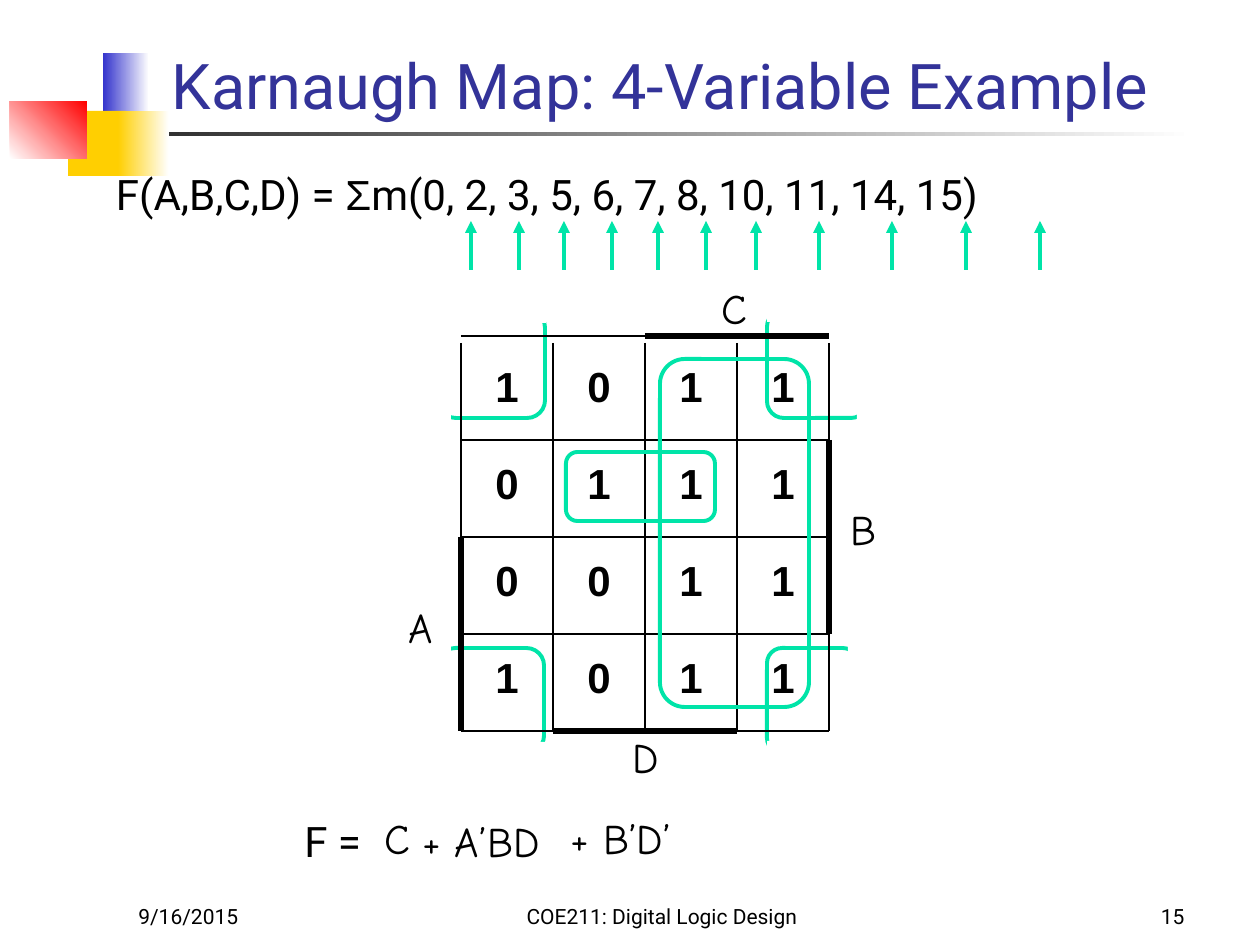
from lxml import etree
from pptx import Presentation
from pptx.dml.color import RGBColor
from pptx.enum.shapes import MSO_CONNECTOR, MSO_SHAPE
from pptx.enum.text import MSO_ANCHOR, MSO_AUTO_SIZE, PP_ALIGN
from pptx.oxml.ns import qn
from pptx.util import Pt

LEFT, CENTER, RIGHT = PP_ALIGN.LEFT, PP_ALIGN.CENTER, PP_ALIGN.RIGHT
TOP, MIDDLE, BOTTOM = MSO_ANCHOR.TOP, MSO_ANCHOR.MIDDLE, MSO_ANCHOR.BOTTOM
RECT, ROUNDED = MSO_SHAPE.RECTANGLE, MSO_SHAPE.ROUNDED_RECTANGLE

THEME = {
    "ink": "000000", "title": "333399", "loop": "00E4A8", "paper": "FFFFFF",
    "gray": "1C1C1C", "blue": "3333CC", "yellow": "FFCF01", "red": "FF0000",
    "sans": "Roboto", "digit": "Arial", "hand": "Comic Neue",
    "title_size": 36, "text_size": 24, "footer_size": 12,
    "thin": 1, "thick": 3, "loop_line": 2.25,
}

# Content; lengths in px, 126 to the inch
TITLE = "Karnaugh Map: 4-Variable Example"
FUNCTION = [("F(A,B,C,D) = ", "sans"), ("Σ", "digit"),
            ("m(0, 2, 3, 5, 6, 7, 8, 10, 11, 14, 15)", "sans")]
FOOTERS = [("9/16/2015", (126, 872, 262, 63), LEFT),
           ("COE211: Digital Logic Design", (462, 872, 400, 63), CENTER),
           ("15", (935, 872, 262, 63), RIGHT)]
DECORATION = [  # box, first colour, last colour, angle
    ((60, 132, 1134, 4), "gray", "paper", 0),
    ((103, 53, 46, 65), "blue", "paper", 0),
    ((68, 111, 58, 65), "yellow", "yellow", 0),
    ((118, 111, 51, 65), "yellow", "paper", 0),
    ((10, 101, 77, 58), "paper", "red", 45),
]
MAP_VALUES = ["1011", "0111", "0011", "1011"]
MAP_LEFT, MAP_TOP, CELL_W, CELL_H, TOP_GAP = 461, 343, 92, 97, 7
MAP_EDGES = [  # column, row to column, row, weight
    (0, 0, 2, 0, "thin"), (2, 0, 4, 0, "thick"),
    (0, 4, 1, 4, "thin"), (1, 4, 3, 4, "thick"), (3, 4, 4, 4, "thin"),
    (0, 0, 0, 2, "thin"), (0, 2, 0, 4, "thick"),
    (4, 0, 4, 1, "thin"), (4, 1, 4, 3, "thick"), (4, 3, 4, 4, "thin"),
]
CORNER_LOOPS = [  # loop, then the covers that open its outer sides
    ((438, 310, 107, 108), (410, 295, 41, 131), (406, 284, 140, 39)),
    ((767, 310, 101, 108), (857, 295, 39, 131), (767, 283, 131, 39)),
    ((438, 648, 106, 105), (410, 640, 41, 127), (407, 742, 139, 38)),
    ((767, 648, 91, 105), (848, 640, 35, 127), (767, 741, 118, 38)),
]
INNER_LOOPS = [(566, 452, 149, 69), (660, 359, 149, 348)]
VARIABLES = [("A", (406, 620, 35, 35)), ("B", (848, 522, 32, 35)),
             ("D", (630, 750, 35, 35))]
TERMS = [("C", (709, 276, 50, 63)), ("C", (372, 806, 50, 63)),
         ("+ A’BD", (410, 809, 152, 63)), ("+ B’D’", (558, 806, 130, 63))]
RESULT = ("F =", (292, 809, 110, 57))
MINTERM_ARROWS = [471, 519, 564, 612, 658, 706, 756, 819, 892, 966, 1040]
ARROW_BOTTOM, ARROW_TOP = 270, 221


def px(length):
    return round(length * 914400 / 126)


def scaled(box):
    return [px(length) for length in box]


def color(name):
    return RGBColor.from_string(THEME[name])


def style(font, face, size="text_size", ink="ink", bold=False):
    font.name, font.size, font.bold = THEME[face], Pt(THEME[size]), bold
    font.color.rgb = color(ink)


def add_text(slide, text, box, face, size="text_size", align=LEFT, anchor=TOP,
             wrap=True, insets=None, spacing=None, bold=False):
    frame = slide.shapes.add_textbox(*scaled(box)).text_frame
    frame.text = text
    frame.word_wrap, frame.vertical_anchor = wrap, anchor
    if not wrap:
        frame.auto_size = MSO_AUTO_SIZE.SHAPE_TO_FIT_TEXT
    if insets:
        frame.margin_left = frame.margin_right = px(insets[0])
        frame.margin_top = frame.margin_bottom = px(insets[1])
    paragraph = frame.paragraphs[0]
    paragraph.alignment, paragraph.line_spacing = align, spacing
    style(paragraph.runs[0].font, face, size, bold=bold)


def add_block(slide, box, kind=RECT):
    block = slide.shapes.add_shape(kind, *scaled(box))
    block.shadow.inherit = False
    block.line.fill.background()
    return block


def add_loop(slide, box):
    loop = add_block(slide, box, ROUNDED)
    loop.fill.background()
    loop.line.color.rgb = color("loop")
    loop.line.width = Pt(THEME["loop_line"])


def add_line(slide, ends, ink, weight):
    line = slide.shapes.add_connector(MSO_CONNECTOR.STRAIGHT, *scaled(ends))
    line.line.color.rgb = color(ink)
    line.line.width = Pt(THEME[weight])
    properties = line._element.spPr
    etree.SubElement(properties, qn("a:effectLst"))
    return properties


def grid_point(column, row):
    return MAP_LEFT + CELL_W * column, MAP_TOP + CELL_H * row


def add_heading(slide):
    title, body = slide.placeholders
    for holder, box in ((title, (159, 10, 1073, 118)), (body, (116, 174, 1040, 45))):
        holder.left, holder.top, holder.width, holder.height = scaled(box)
        holder.text_frame.auto_size = MSO_AUTO_SIZE.NONE
    title.text_frame.text = TITLE
    title.text_frame.vertical_anchor = BOTTOM
    heading = title.text_frame.paragraphs[0]
    heading.alignment = LEFT
    style(heading.runs[0].font, "sans", "title_size", "title")

    frame = body.text_frame
    frame.margin_left = frame.margin_right = frame.margin_top = frame.margin_bottom = 0
    formula = frame.paragraphs[0]
    properties = formula._p.get_or_add_pPr()
    properties.set("marL", "0")
    properties.set("indent", "0")
    etree.SubElement(properties, qn("a:buNone"))
    formula.line_spacing, formula.space_before = 0.9, Pt(0)
    for text, face in FUNCTION:
        run = formula.add_run()
        run.text = text
        style(run.font, face)


def add_map(slide):
    # Digits
    for row, values in enumerate(MAP_VALUES):
        for column, value in enumerate(values):
            add_text(slide, value, (*grid_point(column, row), CELL_W, CELL_H), "digit",
                     align=CENTER, anchor=MIDDLE, spacing=0.75, bold=True)
    # Inner rules and outer edges
    rules = [(0, i, 4, i, "thin") for i in (1, 2, 3)]
    rules += [(i, 0, i, 4, "thin") for i in (1, 2, 3)]
    for x1, y1, x2, y2, weight in rules + MAP_EDGES:
        lift = TOP_GAP if y1 == y2 == 0 else 0
        (left, top), (right, bottom) = grid_point(x1, y1), grid_point(x2, y2)
        add_line(slide, (left, top - lift, right, bottom - lift), "ink", weight)


def main():
    deck = Presentation()
    deck.slide_width, deck.slide_height = px(1260), px(945)
    slide = deck.slides.add_slide(deck.slide_layouts[1])

    # Corner squares and title rule
    for box, first, last, angle in DECORATION:
        fill = add_block(slide, box).fill
        if first == last:
            fill.solid()
            fill.fore_color.rgb = color(first)
            continue
        fill.gradient()
        fill.gradient_angle = angle
        for stop, name in zip(fill.gradient_stops, (first, last)):
            stop.color.rgb = color(name)
    add_heading(slide)
    for text, box, align in FOOTERS:
        add_text(slide, text, box, "sans", "footer_size", align, BOTTOM)

    # Loops that wrap round the map's corners, then the map itself
    for loop, *covers in CORNER_LOOPS:
        add_loop(slide, loop)
        for cover in covers:
            fill = add_block(slide, cover).fill
            fill.solid()
            fill.fore_color.rgb = color("paper")
    add_map(slide)
    for loop in INNER_LOOPS:
        add_loop(slide, loop)

    # Variable names and simplified result
    for text, box in VARIABLES:
        add_text(slide, text, box, "hand", wrap=False, insets=(3, 4), spacing=Pt(15.8))
    for text, box in TERMS:
        add_text(slide, text, box, "hand", wrap=False)
    add_text(slide, *RESULT, "sans")

    # Arrows under the minterms
    for x in MINTERM_ARROWS:
        properties = add_line(slide, (x, ARROW_BOTTOM, x, ARROW_TOP), "loop", "loop_line")
        etree.SubElement(properties.find(qn("a:ln")), qn("a:tailEnd"), type="triangle")

    deck.save("out.pptx")


if __name__ == "__main__":
    main()
